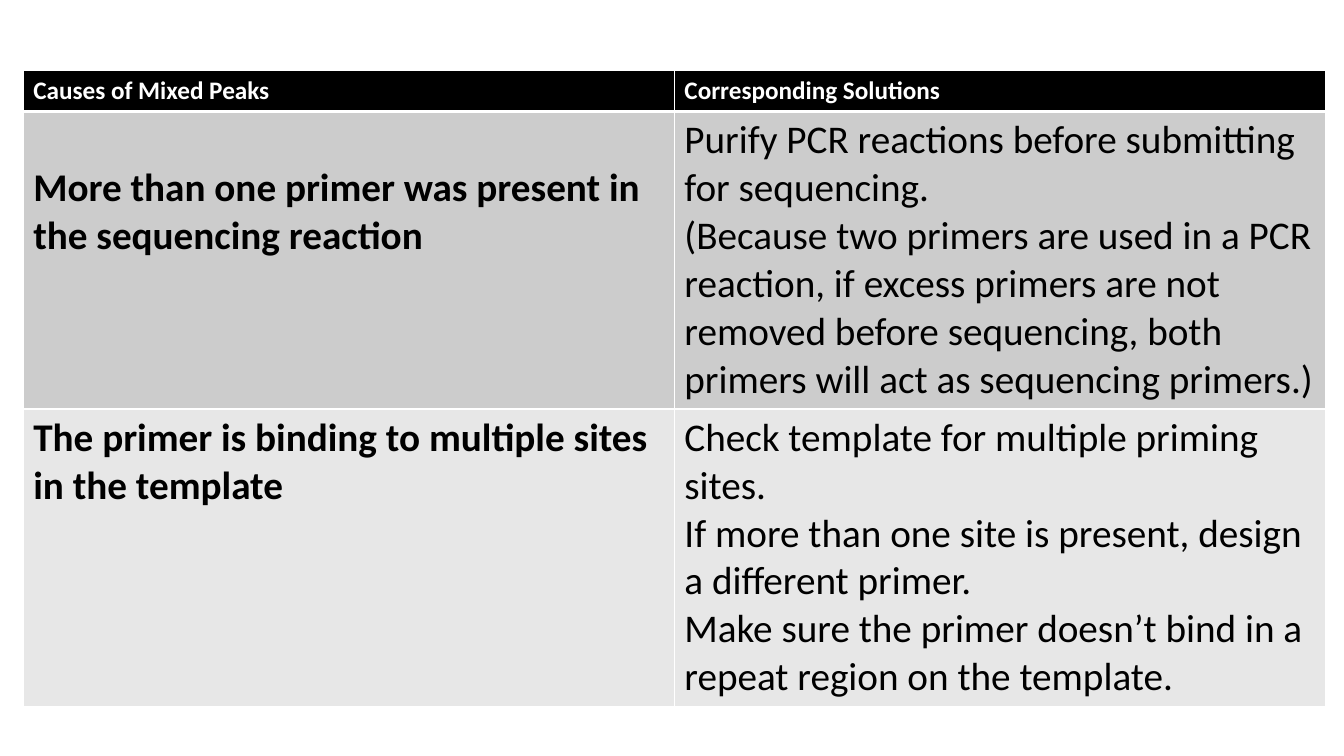
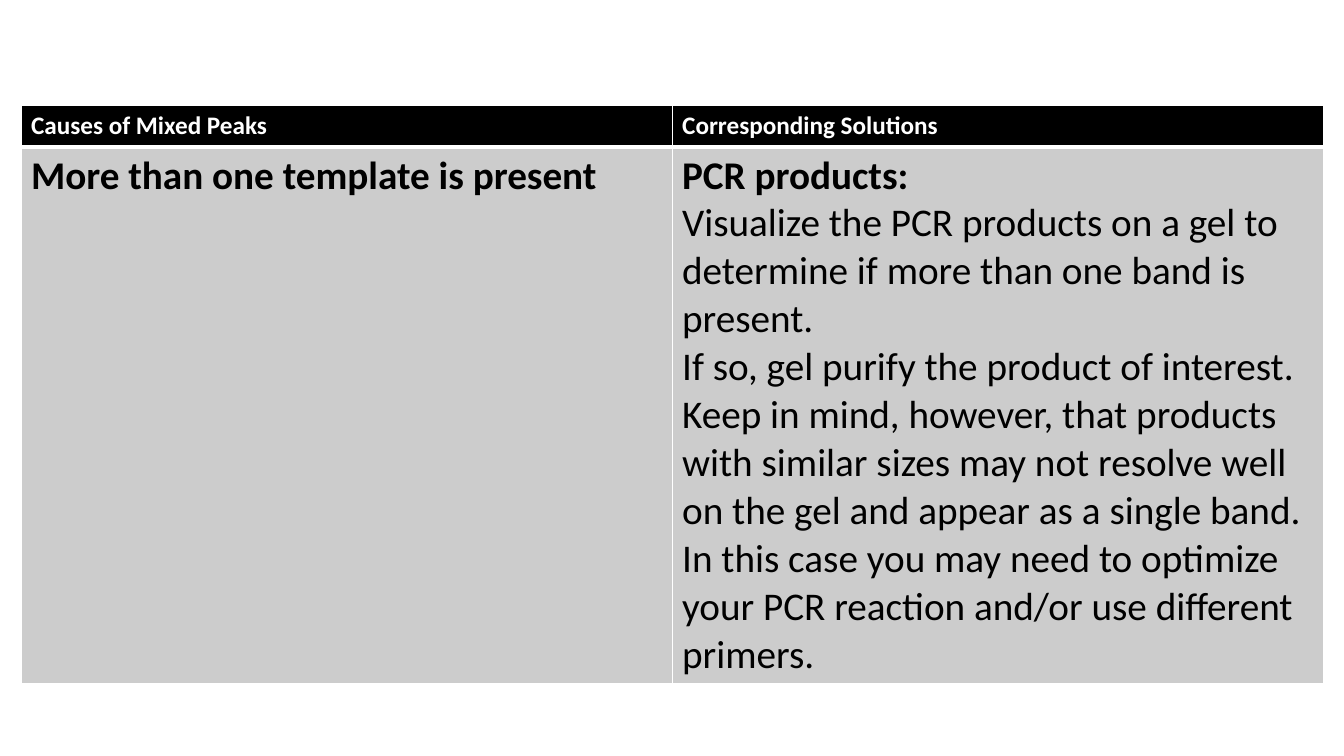
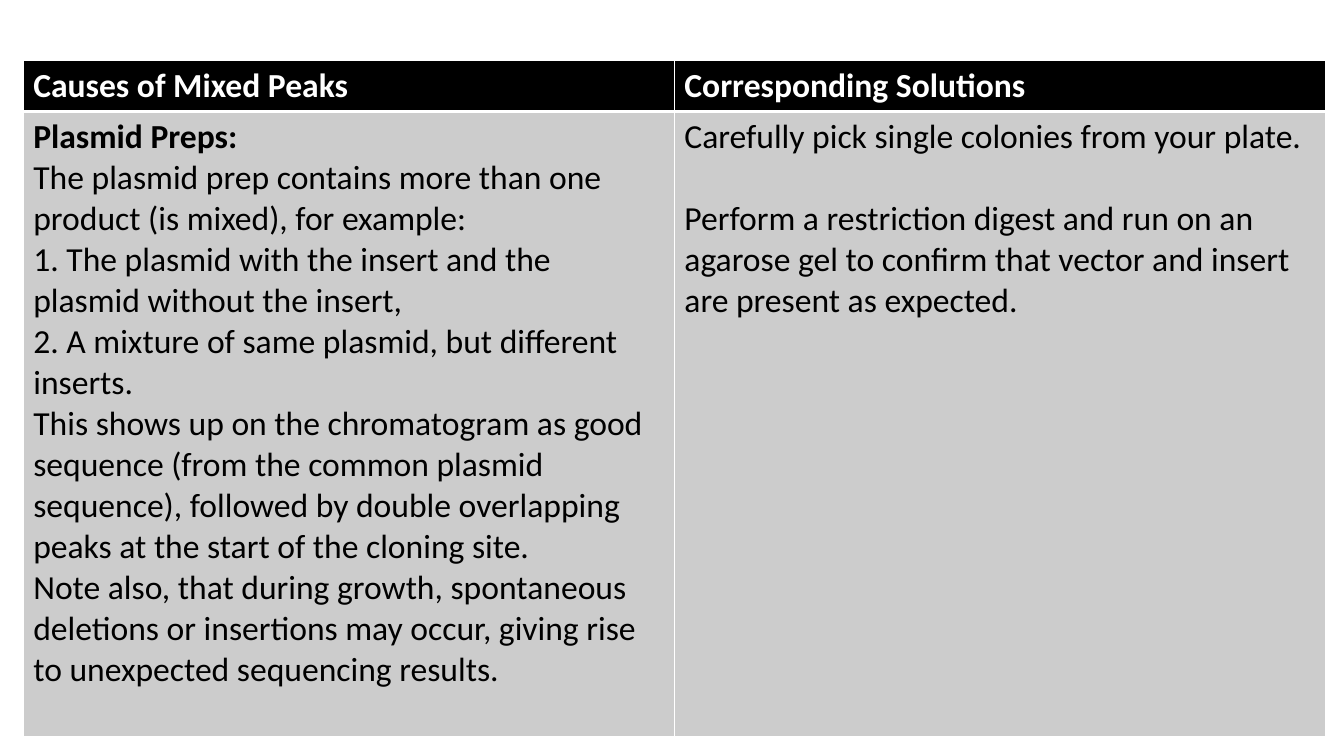
from dataclasses import dataclass

from lxml.etree import SubElement
from pptx import Presentation
from pptx.dml.color import RGBColor as Rgb
from pptx.oxml.ns import qn
from pptx.util import Pt

BLACK = Rgb(0x00, 0x00, 0x00)
WHITE = Rgb(0xFF, 0xFF, 0xFF)
BANDS = (Rgb(0xCC, 0xCC, 0xCC), Rgb(0xE7, 0xE7, 0xE7))
FONT = "Calibri"
COL = 465.1
LINE = 1.22  # line height as a share of the font size
PAD = 3.6
THIN, THICK = 1, 3
HEADS = ("Causes of Mixed Peaks", "Corresponding Solutions")


@dataclass(frozen=True)
class Par:
    text: str
    bold: bool = False
    gap: int = 0  # blank lines above


@dataclass(frozen=True)
class Row:
    cause: tuple[Par, ...]
    cure: tuple[Par, ...]
    lines: int


@dataclass(frozen=True)
class Page:
    left: float
    top: float
    head: int
    body: int
    rows: tuple[Row, ...]


PAGES = (
    Page(16.6, 50.4, 18, 28, (
        Row(
            (Par("More than one primer was present in the sequencing reaction", True, 1),),
            (Par("Purify PCR reactions before submitting for sequencing."),
             Par("(Because two primers are used in a PCR reaction, if excess primers "
                 "are not removed before sequencing, both primers will act as "
                 "sequencing primers.)")),
            6),
        Row(
            (Par("The primer is binding to multiple sites in the template", True),),
            (Par("Check template for multiple priming sites."),
             Par("If more than one site is present, design a different primer."),
             Par("Make sure the primer doesn’t bind in a repeat region on the template.")),
            6),
    )),
    Page(15, 75.6, 18, 28, (
        Row(
            (Par("More than one template is present", True),),
            (Par("PCR products:", True),
             Par("Visualize the PCR products on a gel to determine if more than one "
                 "band is present."),
             Par("If so, gel purify the product of interest."),
             Par("Keep in mind, however, that products with similar sizes may not "
                 "resolve well on the gel and appear as a single band."),
             Par("In this case you may need to optimize your PCR reaction and/or use "
                 "different primers.")),
            11),
    )),
    Page(16.6, 43.2, 24, 24, (
        Row(
            (Par("Plasmid Preps:", True),
             Par("The plasmid prep contains more than one product (is mixed), for example:"),
             Par("1. The plasmid with the insert and the plasmid without the insert,"),
             Par("2. A mixture of same plasmid, but different inserts."),
             Par("This shows up on the chromatogram as good sequence (from the common "
                 "plasmid sequence), followed by double overlapping peaks at the start "
                 "of the cloning site."),
             Par("Note also, that during growth, spontaneous deletions or insertions may "
                 "occur, giving rise to unexpected sequencing results.")),
            (Par("Carefully pick single colonies from your plate."),
             Par("Perform a restriction digest and run on an agarose gel to confirm that "
                 "vector and insert are present as expected.", gap=1)),
            15),
    )),
)


def tall(lines: int, size: int) -> float:
    """Height of a row that holds this many lines."""
    return lines * size * LINE + 2 * PAD


def edge(cell, top: int, low: int) -> None:
    """White borders; they must come before the fill in the cell's XML."""
    props = cell._tc.get_or_add_tcPr()
    sides = (("a:lnL", THIN), ("a:lnR", THIN), ("a:lnT", top), ("a:lnB", low))
    for spot, (tag, width) in enumerate(sides):
        line = SubElement(props, qn(tag), w=str(Pt(width)))
        fill = SubElement(line, qn("a:solidFill"))
        SubElement(fill, qn("a:srgbClr"), val=str(WHITE))
        props.insert(spot, line)


def write(cell, pars: tuple[Par, ...], size: int, ink: Rgb, back: Rgb) -> None:
    cell.fill.solid()
    cell.fill.fore_color.rgb = back
    frame = cell.text_frame
    for spot, par in enumerate(pars):
        line = frame.add_paragraph() if spot else frame.paragraphs[0]
        space = par.gap * size * LINE
        if spot:
            line.space_before = Pt(space)
        else:
            cell.margin_top = Pt(PAD + space)
        run = line.add_run()
        run.text = par.text
        font = run.font
        font.name, font.size, font.bold = FONT, Pt(size), par.bold
        font.color.rgb = ink


def draw(slide, page: Page) -> None:
    highs = [tall(1, page.head)] + [tall(row.lines, page.body) for row in page.rows]
    grid = slide.shapes.add_table(
        len(highs), len(HEADS), Pt(page.left), Pt(page.top),
        Pt(COL * len(HEADS)), Pt(sum(highs))).table
    grid.first_row = grid.horz_banding = False
    for col in grid.columns:
        col.width = Pt(COL)
    for row, high in zip(grid.rows, highs):
        row.height = Pt(high)

    # Header row
    for col, head in enumerate(HEADS):
        cell = grid.cell(0, col)
        write(cell, (Par(head, True),), page.head, WHITE, BLACK)
        edge(cell, THIN, THICK)

    # Body rows
    for num, row in enumerate(page.rows):
        for col, pars in enumerate((row.cause, row.cure)):
            cell = grid.cell(num + 1, col)
            write(cell, pars, page.body, BLACK, BANDS[num % 2])
            edge(cell, THIN if num else THICK, THIN)


def main() -> None:
    deck = Presentation()
    deck.slide_width, deck.slide_height = Pt(960), Pt(540)
    for page in PAGES:
        draw(deck.slides.add_slide(deck.slide_layouts[6]), page)
    deck.save("out.pptx")


if __name__ == "__main__":
    main()
